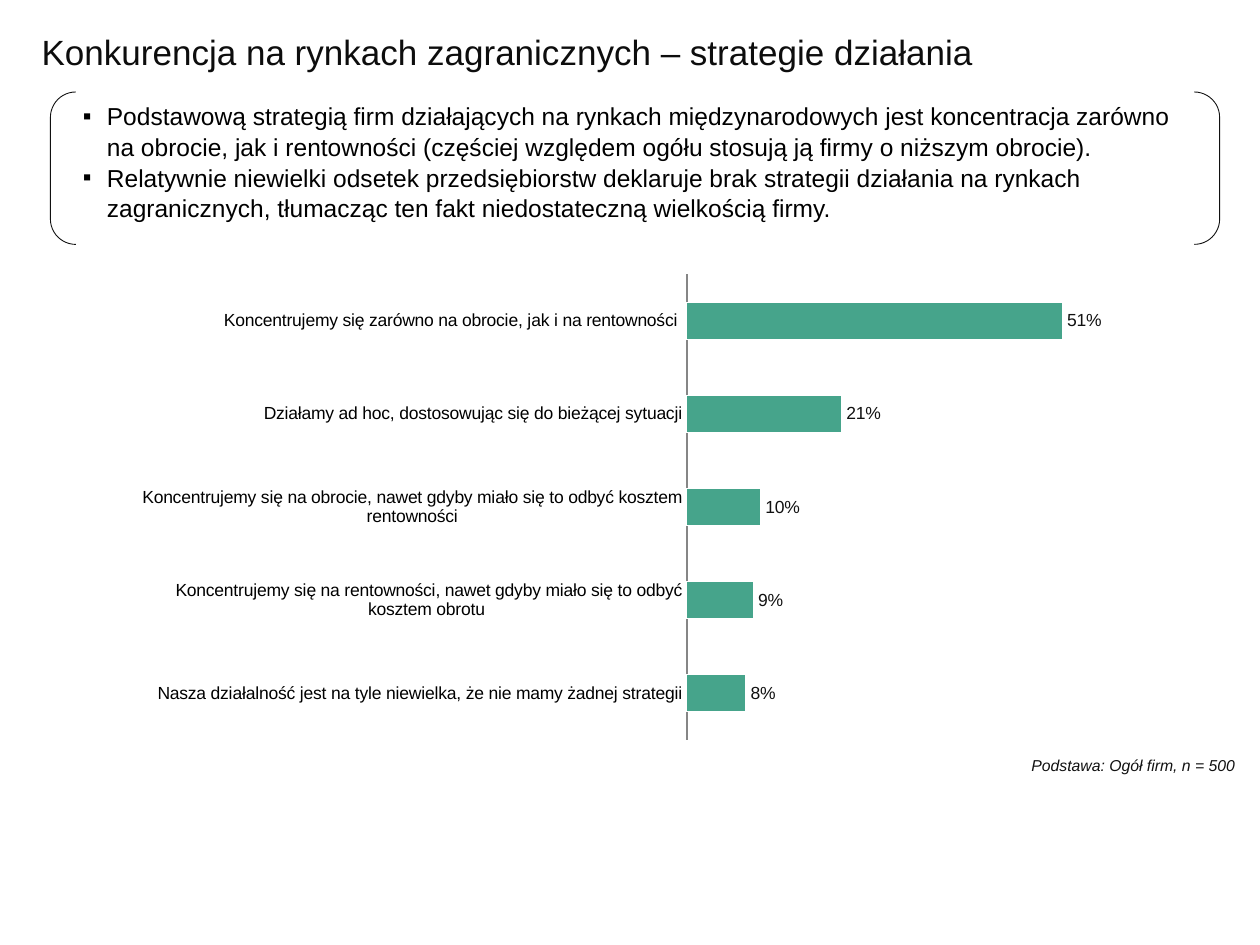
from lxml import etree
from pptx import Presentation
from pptx.chart.data import CategoryChartData
from pptx.dml.color import RGBColor
from pptx.enum.chart import XL_CHART_TYPE, XL_LABEL_POSITION, XL_TICK_MARK
from pptx.enum.shapes import MSO_SHAPE
from pptx.enum.text import MSO_ANCHOR, PP_ALIGN
from pptx.oxml import parse_xml
from pptx.oxml.ns import nsdecls, qn
from pptx.util import Inches, Pt

FONT = "Arial"
BLACK = RGBColor(0x00, 0x00, 0x00)
WHITE = RGBColor(0xFF, 0xFF, 0xFF)
TITLE_INK = RGBColor(0x0D, 0x0D, 0x0D)
INK = RGBColor(0x11, 0x11, 0x11)
GREEN = RGBColor(0x46, 0xA4, 0x8B)
AXIS_GRAY = RGBColor(0x86, 0x86, 0x86)

TITLE = "Konkurencja na rynkach zagranicznych – strategie działania"
FINDINGS = [
    "Podstawową strategią firm działających na rynkach międzynarodowych jest koncentracja "
    "zarówno na obrocie, jak i rentowności (częściej względem ogółu stosują ją firmy o "
    "niższym obrocie).",
    "Relatywnie niewielki odsetek przedsiębiorstw deklaruje brak strategii działania na "
    "rynkach zagranicznych, tłumacząc ten fakt niedostateczną wielkością firmy.",
]
BASE_NOTE = "Podstawa: Ogół firm, n = 500"
STRATEGIES = [  # bottom bar first
    ("Nasza działalność jest na tyle niewielka, że nie mamy żadnej strategii", 0.08),
    ("Koncentrujemy się na rentowności, nawet gdyby miało się to odbyć kosztem obrotu ", 0.09),
    ("Koncentrujemy się na obrocie, nawet gdyby miało się to odbyć kosztem rentowności", 0.10),
    ("Działamy ad hoc, dostosowując się do bieżącej sytuacji", 0.21),
    ("Koncentrujemy się zarówno na obrocie, jak i na rentowności ", 0.51),
]
PLOT_AREA = {"x": 0.55, "y": 0.02, "w": 0.43, "h": 0.96}  # shares of the chart


def inches(*lengths):
    return [Inches(length) for length in lengths]


def style_font(font, size, color, italic=False):
    font.name, font.size, font.italic = FONT, Pt(size), italic
    font.color.rgb = color


def write(frame, paragraphs, size, color, italic=False, align=PP_ALIGN.LEFT,
          anchor=MSO_ANCHOR.TOP, wrap=True, bullet=None, spacing=1.0):
    frame.word_wrap = wrap
    frame.vertical_anchor = anchor
    for index, text in enumerate(paragraphs):
        paragraph = frame.add_paragraph() if index else frame.paragraphs[0]
        paragraph.alignment = align
        paragraph.line_spacing = spacing
        if bullet:
            properties = paragraph._p.get_or_add_pPr()
            properties.set("marL", str(Inches(0.19)))
            properties.set("indent", str(-Inches(0.19)))
            etree.SubElement(properties, qn("a:buFont")).set("typeface", FONT)
            etree.SubElement(properties, qn("a:buChar")).set("char", bullet)
        run = paragraph.add_run()
        run.text = text
        style_font(run.font, size, color, italic)


def place_plot(chart):
    """Fix the inner plot area so that the category labels get the left half."""
    plot_area = chart._chartSpace.chart.plotArea
    for layout in plot_area.findall(qn("c:layout")):
        plot_area.remove(layout)
    modes = '<c:xMode val="edge"/><c:yMode val="edge"/>'
    shares = "".join(f'<c:{key} val="{share}"/>' for key, share in PLOT_AREA.items())
    plot_area.insert(0, parse_xml(
        f'<c:layout {nsdecls("c")}><c:manualLayout><c:layoutTarget val="inner"/>'
        f"{modes}{shares}</c:manualLayout></c:layout>"))


def add_strategy_chart(slide):
    data = CategoryChartData(number_format="0%")
    data.categories = [name for name, _ in STRATEGIES]
    data.add_series("Series 1", [share for _, share in STRATEGIES])
    chart = slide.shapes.add_chart(
        XL_CHART_TYPE.BAR_CLUSTERED, *inches(0.97, 2.1, 8.15, 3.85), data).chart
    chart.has_legend = chart.has_title = False
    style_font(chart.font, 10, BLACK)

    categories = chart.category_axis
    categories.major_tick_mark = categories.minor_tick_mark = XL_TICK_MARK.NONE
    categories.has_major_gridlines = False
    categories.format.line.color.rgb = AXIS_GRAY
    categories.format.line.width = Pt(0.75)
    values = chart.value_axis
    values.minimum_scale, values.maximum_scale = 0, 0.6
    values.has_major_gridlines = values.visible = False

    plot = chart.plots[0]
    plot.gap_width, plot.overlap, plot.vary_by_categories = 150, -25, False
    bars = plot.series[0].format
    bars.fill.solid()
    bars.fill.fore_color.rgb = GREEN
    bars.line.color.rgb = WHITE
    plot.has_data_labels = True
    labels = plot.data_labels
    labels.show_value = True
    labels.number_format, labels.number_format_is_linked = "0%", False
    labels.position = XL_LABEL_POSITION.OUTSIDE_END
    style_font(labels.font, 10, INK)
    place_plot(chart)


def main():
    deck = Presentation()
    deck.slide_width, deck.slide_height = inches(10, 7.5)
    slide = deck.slides.add_slide(deck.slide_layouts[5])
    shapes = slide.shapes

    title = shapes.title
    title.left, title.top, title.width, title.height = inches(0.23, 0.01, 9.45, 0.79)
    write(title.text_frame, [TITLE], 20, TITLE_INK, anchor=MSO_ANCHOR.MIDDLE)

    findings = shapes.add_textbox(*inches(0.56, 0.74, 8.98, 1.04))
    write(findings.text_frame, FINDINGS, 14, BLACK, bullet="▪", spacing=1.05)

    brackets = shapes.add_shape(MSO_SHAPE.DOUBLE_BRACKET, *inches(0.4, 0.73, 9.28, 1.21))
    brackets.shadow.inherit = False
    brackets.fill.background()
    brackets.line.color.rgb = INK
    brackets.line.width = Pt(0.5)

    base_note = shapes.add_textbox(*inches(8.07, 5.95, 1.83, 0.25))
    write(base_note.text_frame, [BASE_NOTE], 9, INK, italic=True,
          align=PP_ALIGN.RIGHT, wrap=False)

    add_strategy_chart(slide)
    deck.save("out.pptx")


if __name__ == "__main__":
    main()
